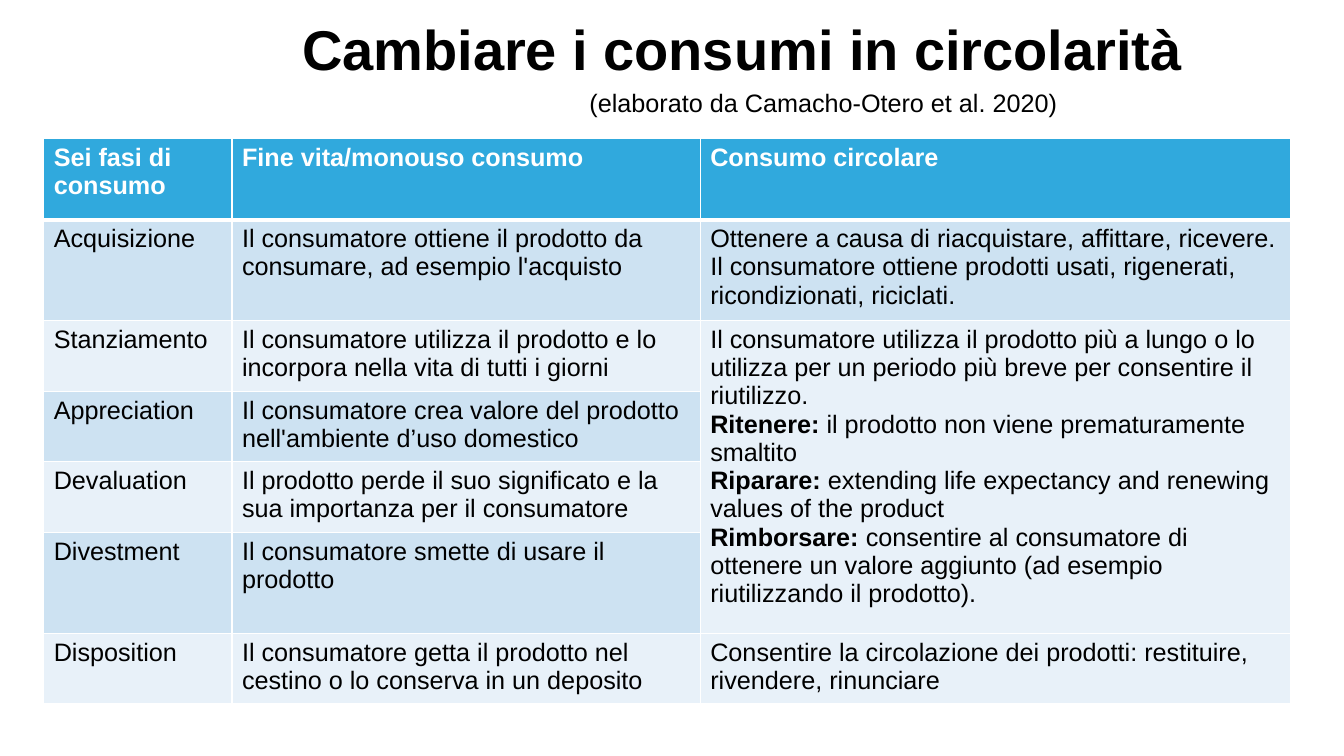
"""Build the slide comparing single-use and circular consumption phases."""
from lxml.etree import SubElement
from pptx import Presentation
from pptx.dml.color import RGBColor
from pptx.enum.text import MSO_ANCHOR, MSO_AUTO_SIZE, PP_ALIGN
from pptx.oxml.ns import qn
from pptx.util import Pt

BLACK = RGBColor(0x00, 0x00, 0x00)
WHITE = RGBColor(0xFF, 0xFF, 0xFF)
HEADER_BLUE = RGBColor(0x30, 0xA9, 0xDD)
BAND_DARK = RGBColor(0xCD, 0xE2, 0xF2)
BAND_LIGHT = RGBColor(0xE8, 0xF1, 0xF9)

COLUMN_WIDTHS = [134.5, 334.5, 422]
ROW_HEIGHTS = [58, 68, 47.5, 47.5, 47.5, 66, 47.5]
ROWS = [
    ("Sei fasi di consumo", "Fine vita/monouso consumo", "Consumo circolare"),
    ("Acquisizione",
     "Il consumatore ottiene il prodotto da consumare, ad esempio l'acquisto",
     "Ottenere a causa di riacquistare, affittare, ricevere. Il consumatore ottiene "
     "prodotti usati, rigenerati, ricondizionati, riciclati."),
    ("Stanziamento",
     "Il consumatore utilizza il prodotto e lo incorpora nella vita di tutti i giorni"),
    ("Appreciation",
     "Il consumatore crea valore del prodotto nell'ambiente d’uso domestico"),
    ("Devaluation",
     "Il prodotto perde il suo significato e la sua importanza per il consumatore"),
    ("Divestment", "Il consumatore smette di usare il prodotto"),
    ("Disposition",
     "Il consumatore getta il prodotto nel cestino o lo conserva in un deposito",
     "Consentire la circolazione dei prodotti: restituire, rivendere, rinunciare"),
]
CIRCULAR_USE = [
    ("", "Il consumatore utilizza il prodotto più a lungo o lo utilizza per un periodo "
         "più breve per consentire il riutilizzo."),
    ("Ritenere: ", "il prodotto non viene prematuramente smaltito"),
    ("Riparare: ", "extending life expectancy and renewing values of the product"),
    ("Rimborsare: ", "consentire al consumatore di ottenere un valore aggiunto "
                     "(ad esempio riutilizzando il prodotto)."),
]


def style(font, size, color, bold):
    font.name = "Arial"
    font.size = Pt(size)
    font.color.rgb = color
    font.bold = bold


def add_border(cell, side, width):
    line = SubElement(cell._tc.get_or_add_tcPr(), qn(f"a:{side}"), w=str(Pt(width)))
    fill = SubElement(line, qn("a:solidFill"))
    SubElement(fill, qn("a:srgbClr"), val=str(WHITE))


deck = Presentation()
deck.slide_width = Pt(960)
deck.slide_height = Pt(540)
page = deck.slides.add_slide(deck.slide_layouts[5])

title = page.shapes.title
title.left, title.top, title.width, title.height = Pt(197.5), Pt(12), Pt(725), Pt(51)
frame = title.text_frame
frame.auto_size = MSO_AUTO_SIZE.NONE
frame.vertical_anchor = MSO_ANCHOR.MIDDLE
frame.margin_left = Pt(18.3)
para = frame.paragraphs[0]
para.text = "Cambiare i consumi in circolarità"
para.alignment = PP_ALIGN.LEFT
para.line_spacing = 0.9
style(para.font, 40, BLACK, True)

source = page.shapes.add_textbox(Pt(414), Pt(58.5), Pt(440.5), Pt(29))
source.text_frame.word_wrap = True
para = source.text_frame.paragraphs[0]
para.text = "(elaborato da Camacho-Otero et al. 2020)"
style(para.font, 18, BLACK, False)

table = page.shapes.add_table(len(ROWS), len(COLUMN_WIDTHS), Pt(31.2), Pt(99),
                              Pt(sum(COLUMN_WIDTHS)), Pt(sum(ROW_HEIGHTS))).table
for column, width in zip(table.columns, COLUMN_WIDTHS):
    column.width = Pt(width)
for row, height in zip(table.rows, ROW_HEIGHTS):
    row.height = Pt(height)

for row_index, texts in enumerate(ROWS):
    header = row_index == 0
    band = HEADER_BLUE if header else BAND_DARK if row_index % 2 else BAND_LIGHT
    for column_index in range(len(COLUMN_WIDTHS)):
        cell = table.cell(row_index, column_index)
        add_border(cell, "lnL", 1)
        add_border(cell, "lnR", 1)
        add_border(cell, "lnT", 3 if row_index == 1 else 1)
        add_border(cell, "lnB", 3 if header else 1)
        cell.fill.solid()
        cell.fill.fore_color.rgb = band
        if column_index < len(texts):
            para = cell.text_frame.paragraphs[0]
            para.text = texts[column_index]
            style(para.font, 18, WHITE if header else BLACK, header)

circular_cell = table.cell(2, 2)
circular_cell.merge(table.cell(5, 2))
for index, (label, text) in enumerate(CIRCULAR_USE):
    if index == 2:
        para = circular_cell.text_frame.add_paragraph()
    elif index == 0:
        para = circular_cell.text_frame.paragraphs[0]
    else:
        para.add_line_break()
    style(para.font, 18, BLACK, False)
    for words, bold in ((label, True), (text, False)):
        if words:
            span = para.add_run()
            span.text = words
            style(span.font, 18, BLACK, bold)

deck.save("out.pptx")
